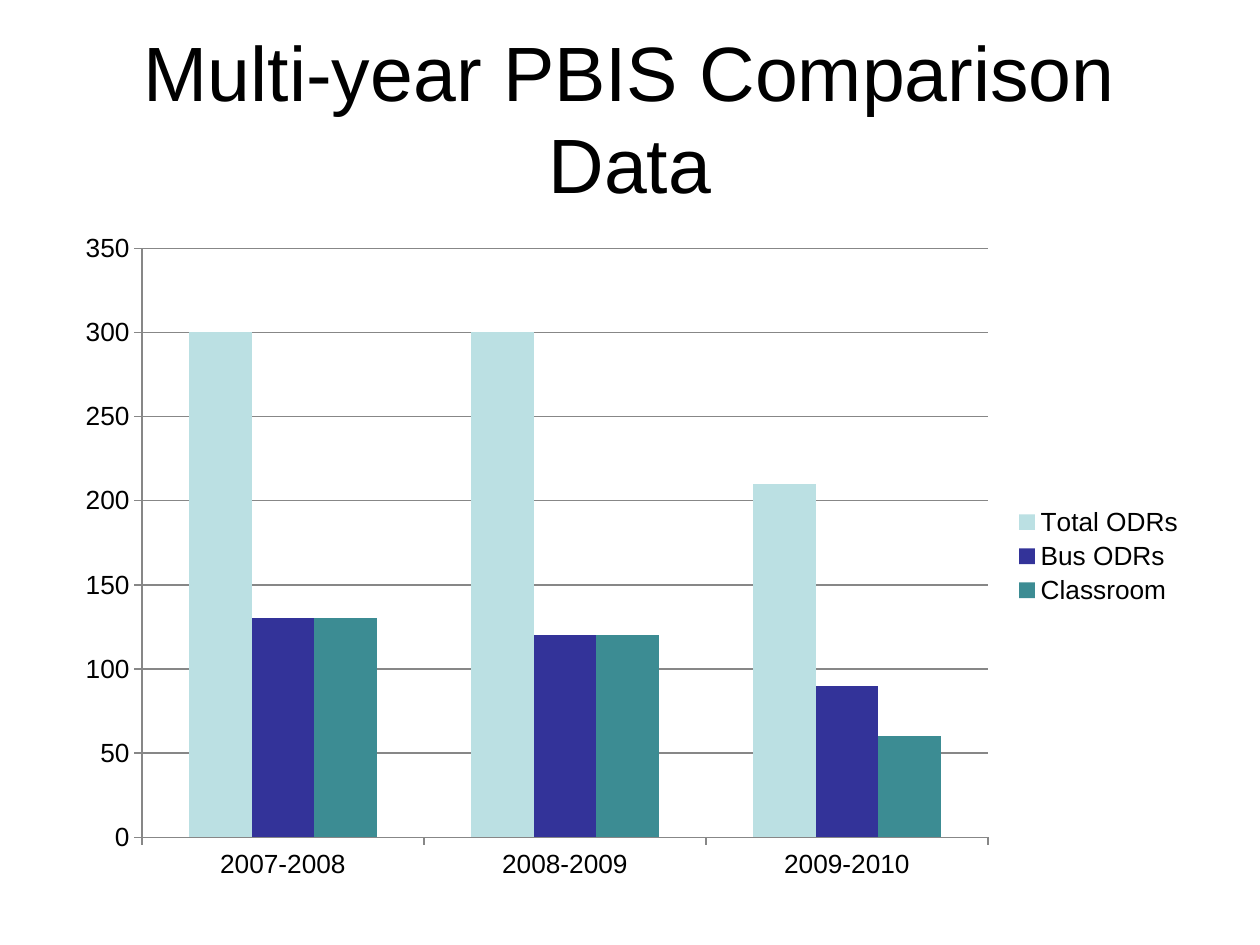
from pptx import Presentation
from pptx.chart.data import CategoryChartData
from pptx.dml.color import RGBColor
from pptx.enum.chart import XL_CHART_TYPE as ChartType, XL_LEGEND_POSITION as LegendPosition, XL_TICK_MARK as TickMark
from pptx.enum.text import MSO_ANCHOR as Anchor, PP_ALIGN as Align
from pptx.util import Inches, Pt

COLORS = {
    "text": "000000",
    "axis": "878787",
    "Total ODRs": "BBE0E3",
    "Bus ODRs": "333399",
    "Classroom": "3C8C93",
}
FONT = "Arial"


def color(name):
    return RGBColor.from_string(COLORS[name])


def style_font(font, size):
    font.name = FONT
    font.size = Pt(size)
    font.color.rgb = color("text")


deck = Presentation()
deck.slide_width = Inches(10)
deck.slide_height = Inches(7.5)
page = deck.slides.add_slide(deck.slide_layouts[6])

title = page.shapes.add_textbox(Inches(0.5), Inches(0.3), Inches(9), Inches(1.25))
frame = title.text_frame
frame.word_wrap = True
frame.vertical_anchor = Anchor.MIDDLE
para = frame.paragraphs[0]
para.alignment = Align.CENTER
span = para.add_run()
span.text = "Multi-year PBIS Comparison Data"
style_font(span.font, 44)

referrals = CategoryChartData()
referrals.categories = ["2007-2008", "2008-2009", "2009-2010"]
referrals.add_series("Total ODRs", (300, 300, 210))
referrals.add_series("Bus ODRs", (130, 120, 90))
referrals.add_series("Classroom", (130, 120, 60))

chart = page.shapes.add_chart(
    ChartType.COLUMN_CLUSTERED, Inches(0.5), Inches(1.75), Inches(9), Inches(5.33), referrals
).chart
style_font(chart.font, 10)
chart.has_title = False
chart.has_legend = True
chart.legend.position = LegendPosition.RIGHT
chart.legend.include_in_layout = False
style_font(chart.legend.font, 15)

plot = chart.plots[0]
plot.vary_by_categories = False
plot.gap_width = 150
plot.overlap = 0
for series in plot.series:
    series.format.fill.solid()
    series.format.fill.fore_color.rgb = color(series.name)

values = chart.value_axis
values.minimum_scale = 0
values.maximum_scale = 350
values.major_unit = 50
values.has_major_gridlines = True
for axis in (chart.category_axis, values):
    axis.major_tick_mark = TickMark.OUTSIDE
    axis.minor_tick_mark = TickMark.NONE
    style_font(axis.tick_labels.font, 15)
for part in (chart.category_axis, values, values.major_gridlines):
    part.format.line.color.rgb = color("axis")
    part.format.line.width = Pt(0.75)

deck.save("out.pptx")
